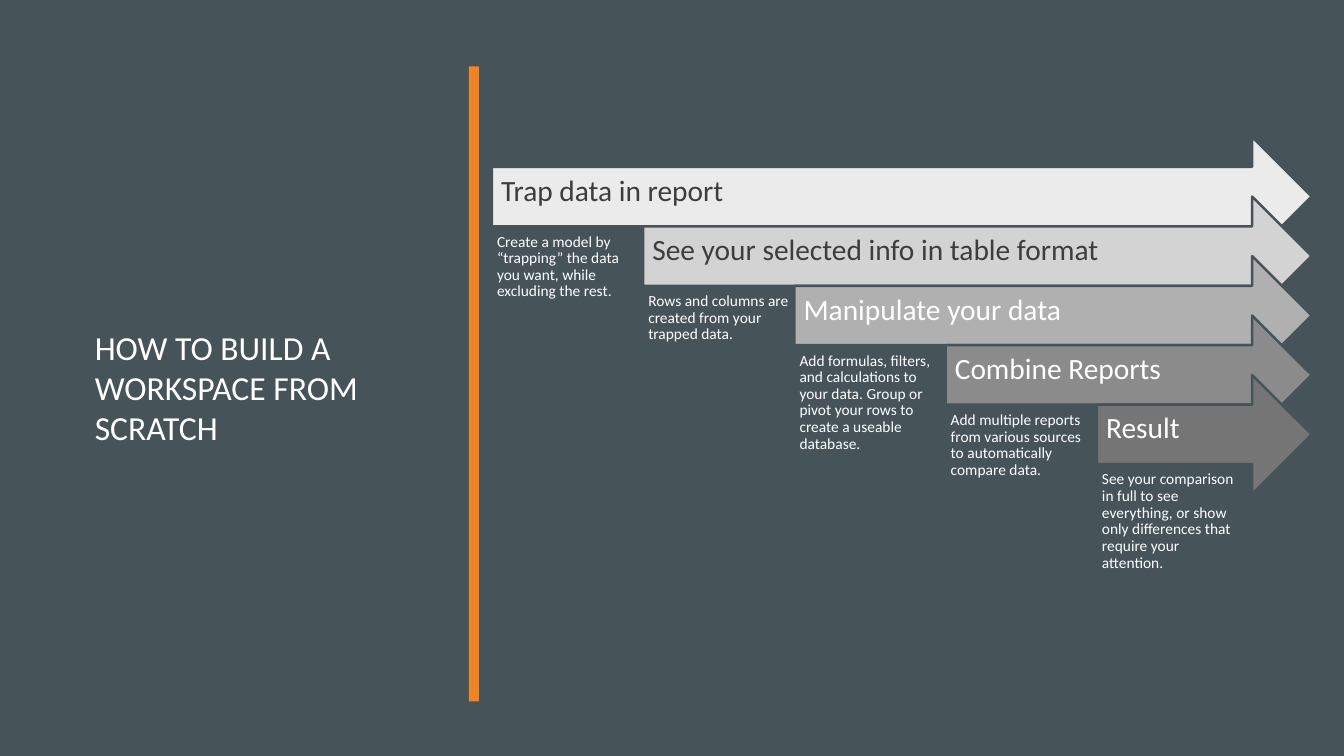
"""Build a slide of five stepped arrows that show how to build a workspace."""
from pptx import Presentation
from pptx.dml.color import RGBColor as Color
from pptx.enum.shapes import MSO_SHAPE as Kind
from pptx.enum.text import MSO_ANCHOR as Anchor, MSO_AUTO_SIZE as Fit, PP_ALIGN as Align
from pptx.util import Inches, Pt

SLATE = Color(0x46, 0x53, 0x59)
ORANGE = Color(0xED, 0x84, 0x28)
WHITE = Color(0xFF, 0xFF, 0xFF)
DARK = Color(0x3D, 0x3D, 0x3D)

TITLE = "HOW TO BUILD A WORKSPACE FROM SCRATCH"
STEPS = [
    ("Trap data in report",
     "Create a model by “trapping” the data you want, while excluding the rest.",
     Color(0xEB, 0xEB, 0xEB), DARK),
    ("See your selected info in table format",
     "Rows and columns are created from your trapped data.",
     Color(0xD3, 0xD3, 0xD3), DARK),
    ("Manipulate your data",
     "Add formulas, filters, and calculations to your data. "
     "Group or pivot your rows to create a useable database.",
     Color(0xB0, 0xB0, 0xB0), WHITE),
    ("Combine Reports",
     "Add multiple reports from various sources to automatically compare data.",
     Color(0x8B, 0x8B, 0x8B), WHITE),
    ("Result",
     "See your comparison in full to see everything, "
     "or show only differences that require your attention.",
     Color(0x75, 0x75, 0x75), WHITE),
]

WIDE, HIGH = 13.33, 7.5
LEFT, TOP, RIGHT = 4.88, 1.36, 13.01
COL, ROW = 1.5, 0.59
NOTE_DROP, NOTE_HIGH = 0.91, 2.17
SIDES = ("margin_left", "margin_top", "margin_right", "margin_bottom")
LABEL = {"size": 21, "anchor": Anchor.MIDDLE, "pads": (0.09, 0.09, 0.28, 0.19)}
NOTE = {"size": 11, "anchor": Anchor.TOP, "pads": (0.05,) * 4}
HEAD = {"size": 24, "anchor": Anchor.MIDDLE, "pads": (0.1, 0.05, 0.1, 0.05), "gap": 1.0}


def box(*spots):
    """Turn lengths in inches into slide units."""
    return [Inches(spot) for spot in spots]


def write(shape, text, color, size, anchor, pads, gap=0.9):
    """Fill a shape with one formatted paragraph."""
    frame = shape.text_frame
    frame.text = text
    look = {"word_wrap": True, "auto_size": Fit.NONE, "vertical_anchor": anchor}
    look.update(zip(SIDES, box(*pads)))
    for name, value in look.items():
        setattr(frame, name, value)
    line = frame.paragraphs[0]
    line.alignment, line.line_spacing = Align.LEFT, gap
    for name, value in {"name": "Calibri", "size": Pt(size)}.items():
        setattr(line.runs[0].font, name, value)
    line.runs[0].font.color.rgb = color


def draw(shapes, kind, spots, color):
    """Add a plain filled shape without an outline."""
    shape = shapes.add_shape(kind, *box(*spots))
    shape.shadow.inherit = False
    shape.fill.solid()
    shape.fill.fore_color.rgb = color
    shape.line.fill.background()
    return shape


def main():
    """Lay out the title, the bar and the steps, then save."""
    deck = Presentation()
    deck.slide_width, deck.slide_height = box(WIDE, HIGH)
    slide = deck.slides.add_slide(deck.slide_layouts[5])
    slide.background.fill.solid()
    slide.background.fill.fore_color.rgb = SLATE

    title = slide.shapes.title
    title.left, title.top, title.width, title.height = box(0.84, 2.9, 3.32, 1.88)
    write(title, TITLE, WHITE, **HEAD)
    draw(slide.shapes, Kind.RECTANGLE, (4.65, 0.66, 0.1, 6.3), ORANGE)

    group = slide.shapes.add_group_shape().shapes
    for i, (head, note, fill, ink) in enumerate(STEPS):
        x, y = LEFT + i * COL, TOP + i * ROW
        arrow = draw(group, Kind.RIGHT_ARROW, (x, y, RIGHT - x, 2 * ROW), fill)
        arrow.line.color.rgb = SLATE
        arrow.line.width = Pt(1.75)
        label = group.add_textbox(*box(x, y + ROW / 2, RIGHT - x - ROW / 2, ROW))
        write(label, head, ink, **LABEL)
        detail = group.add_textbox(*box(x, y + NOTE_DROP, COL, NOTE_HIGH))
        write(detail, note, WHITE, **NOTE)

    deck.save("out.pptx")


if __name__ == "__main__":
    main()
